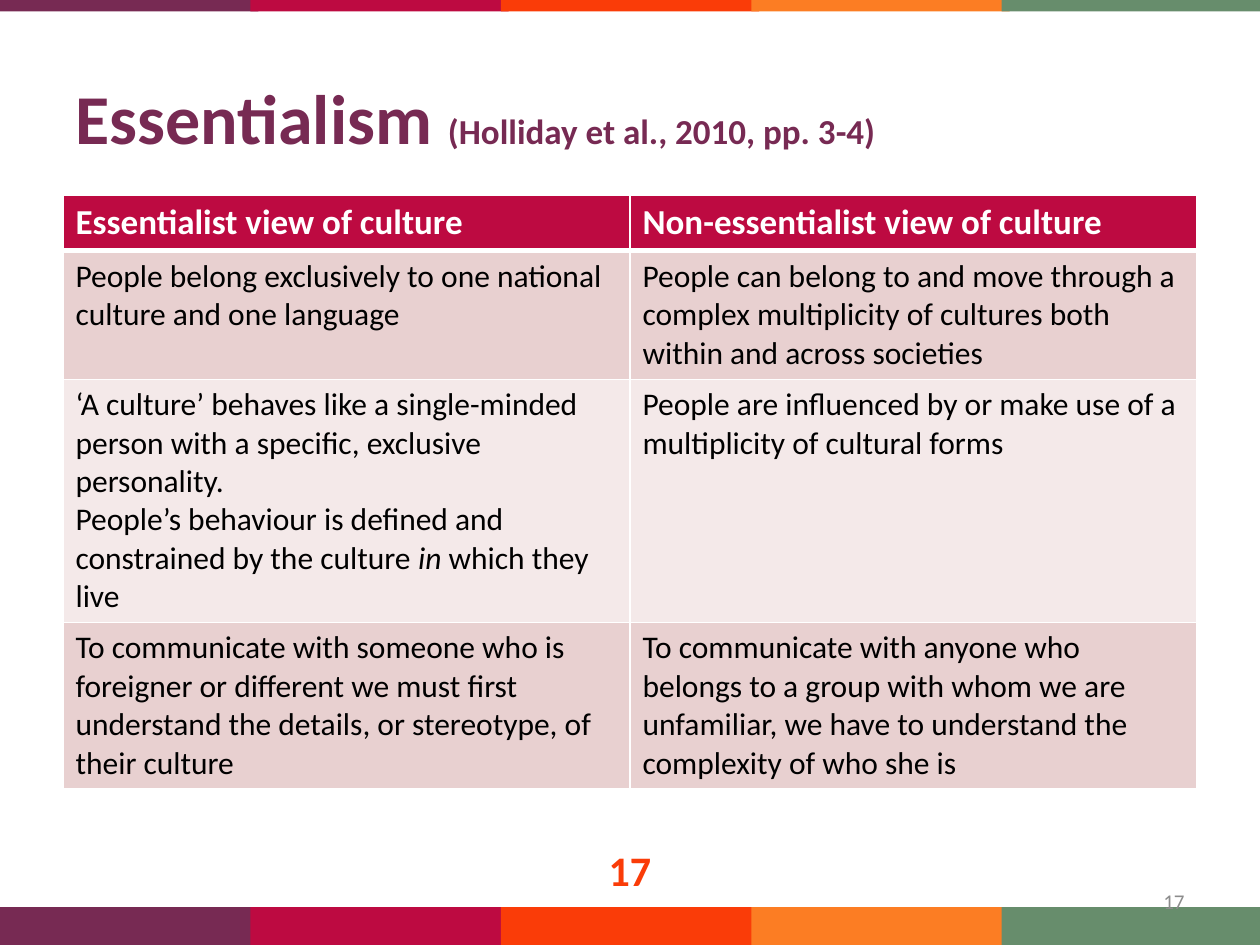
from dataclasses import dataclass

from lxml import etree
from pptx import Presentation
from pptx.dml.color import RGBColor
from pptx.enum.shapes import MSO_SHAPE
from pptx.enum.text import MSO_ANCHOR, PP_ALIGN
from pptx.oxml.ns import qn
from pptx.util import Inches, Pt

RECTANGLE = MSO_SHAPE.RECTANGLE
MIDDLE = MSO_ANCHOR.MIDDLE
LEFT, CENTER, RIGHT = PP_ALIGN.LEFT, PP_ALIGN.CENTER, PP_ALIGN.RIGHT


@dataclass(frozen=True)
class Theme:
    font: str = "Calibri"
    bands: tuple = ("772A53", "BD0A41", "FA3C08", "FC7D23", "678D6C")
    title: str = "772A53"
    header: str = "BD0A41"
    rows: tuple = ("E8D0D0", "F4E9E9")
    white: str = "FFFFFF"
    body: str = "000000"
    page: str = "FA3C08"
    small_page: str = "8C8C8C"
    title_size: int = 40
    header_size: int = 20
    body_size: int = 18
    page_size: int = 24
    small_page_size: int = 12


theme = Theme()


def style(font, size, color, bold=False):
    font.name, font.size, font.bold = theme.font, Pt(size), bold
    font.color.rgb = RGBColor.from_string(color)


def add_border(cell, sides, width):
    properties = cell._tc.get_or_add_tcPr()
    for position, side in enumerate(sides):
        line = etree.Element(qn(f"a:{side}"), w=str(Pt(width[side])))
        fill = etree.SubElement(line, qn("a:solidFill"))
        etree.SubElement(fill, qn("a:srgbClr"), val=theme.white)
        properties.insert(position, line)


presentation = Presentation()
presentation.slide_width, presentation.slide_height = Inches(10), Inches(7.5)
slide = presentation.slides.add_slide(presentation.slide_layouts[5])
slide_width, slide_height = presentation.slide_width, presentation.slide_height
margin = slide_width // 20
content_width = slide_width - 2 * margin

# Colour bands along the top and bottom edges, slightly overlapping
band_width = Inches(2.05)
band_step = (slide_width - band_width) // (len(theme.bands) - 1)
for height, top in ((Inches(0.09), 0), (Inches(0.3), slide_height - Inches(0.3))):
    for index, color in enumerate(theme.bands):
        band = slide.shapes.add_shape(RECTANGLE, index * band_step, top, band_width, height)
        band.shadow.inherit = False
        band.fill.solid()
        band.fill.fore_color.rgb = RGBColor.from_string(color)
        band.line.fill.background()

# Title with its citation
title = slide.shapes.title
title.left, title.top = margin, Inches(0.3)
title.width, title.height = content_width, Inches(1.25)
title.text_frame.vertical_anchor = MIDDLE
paragraph = title.text_frame.paragraphs[0]
paragraph.alignment = LEFT
style(paragraph.font, theme.title_size, theme.title, True)
paragraph.add_run().text = "Essentialism "
citation = paragraph.add_run()
citation.text = "(Holliday et al., 2010, pp. 3-4)"
citation.font.size = Pt(theme.header_size)

# Comparison table: cells hold paragraphs, paragraphs hold runs, every second run is italic
comparison = [
    ([["Essentialist view of culture"]], [["Non-essentialist view of culture"]]),
    (
        [["People belong exclusively to one national culture and one language"]],
        [["People can belong to and move through a complex multiplicity of cultures "
          "both within and across societies"]],
    ),
    (
        [["‘A culture’ behaves like a single-minded person with a specific, "
          "exclusive personality."],
         ["People’s behaviour is defined and constrained by the culture ", "in ",
          "which they live"]],
        [["People are influenced by or make use of a multiplicity of cultural forms"]],
    ),
    (
        [["To communicate with someone who is foreigner or different we must first "
          "understand the details, or stereotype, of their culture"]],
        [["To communicate with anyone who belongs to a group with whom we are "
          "unfamiliar, we have to understand the complexity of who she is"]],
    ),
]
row_heights = [Inches(height) for height in (0.43, 1.02, 1.93, 1.32)]
table = slide.shapes.add_table(
    len(comparison), 2, margin, Inches(1.55), content_width, sum(row_heights)
).table
for row_index, row in enumerate(comparison):
    table.rows[row_index].height = row_heights[row_index]
    is_header = row_index == 0
    if is_header:
        fill_color, size, color = theme.header, theme.header_size, theme.white
    else:
        fill_color, size, color = theme.rows[(row_index - 1) % 2], theme.body_size, theme.body
    border_widths = {"lnL": 1, "lnR": 1, "lnT": 3 if row_index == 1 else 1,
                     "lnB": 3 if is_header else 1}
    for column_index, paragraphs in enumerate(row):
        cell = table.cell(row_index, column_index)
        cell.fill.solid()
        cell.fill.fore_color.rgb = RGBColor.from_string(fill_color)
        add_border(cell, ("lnL", "lnR", "lnT", "lnB"), border_widths)
        for number, runs in enumerate(paragraphs):
            frame = cell.text_frame
            paragraph = frame.add_paragraph() if number else frame.paragraphs[0]
            style(paragraph.font, size, color, is_header)
            for run_index, text in enumerate(runs):
                run = paragraph.add_run()
                run.text = text
                if run_index % 2:
                    run.font.italic = True

# Page numbers: small at the right margin, large in the centre
number_width, number_height = Inches(2.33), Inches(0.4)
page_numbers = [
    (slide_width - margin - number_width, Inches(6.95), RIGHT,
     theme.small_page_size, theme.small_page, False),
    ((slide_width - number_width) // 2, Inches(6.7), CENTER,
     theme.page_size, theme.page, True),
]
for left, top, alignment, size, color, bold in page_numbers:
    frame = slide.shapes.add_textbox(left, top, number_width, number_height).text_frame
    frame.word_wrap = True
    frame.vertical_anchor = MIDDLE
    paragraph = frame.paragraphs[0]
    paragraph.text = "17"
    paragraph.alignment = alignment
    style(paragraph.font, size, color, bold)

presentation.save("out.pptx")
